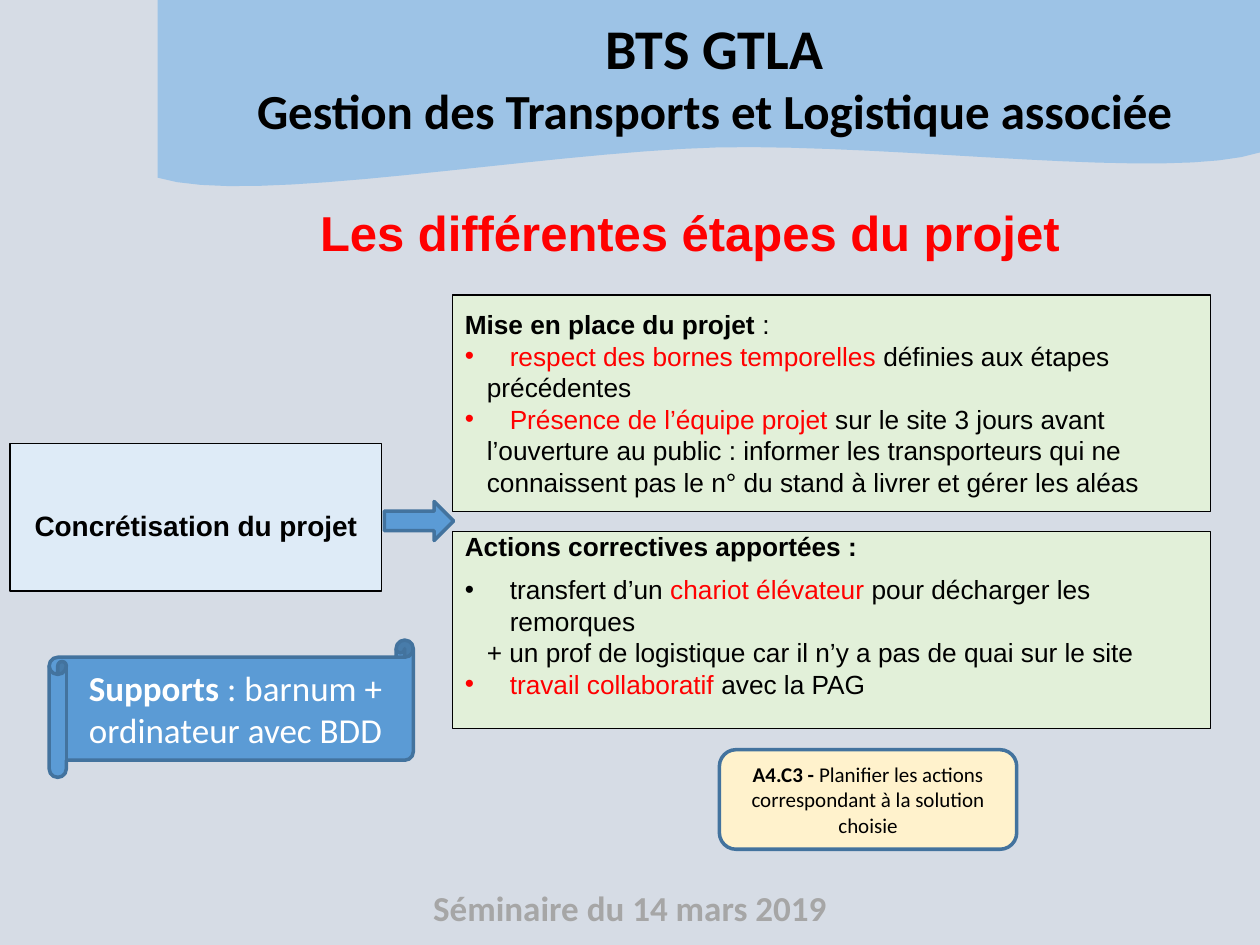
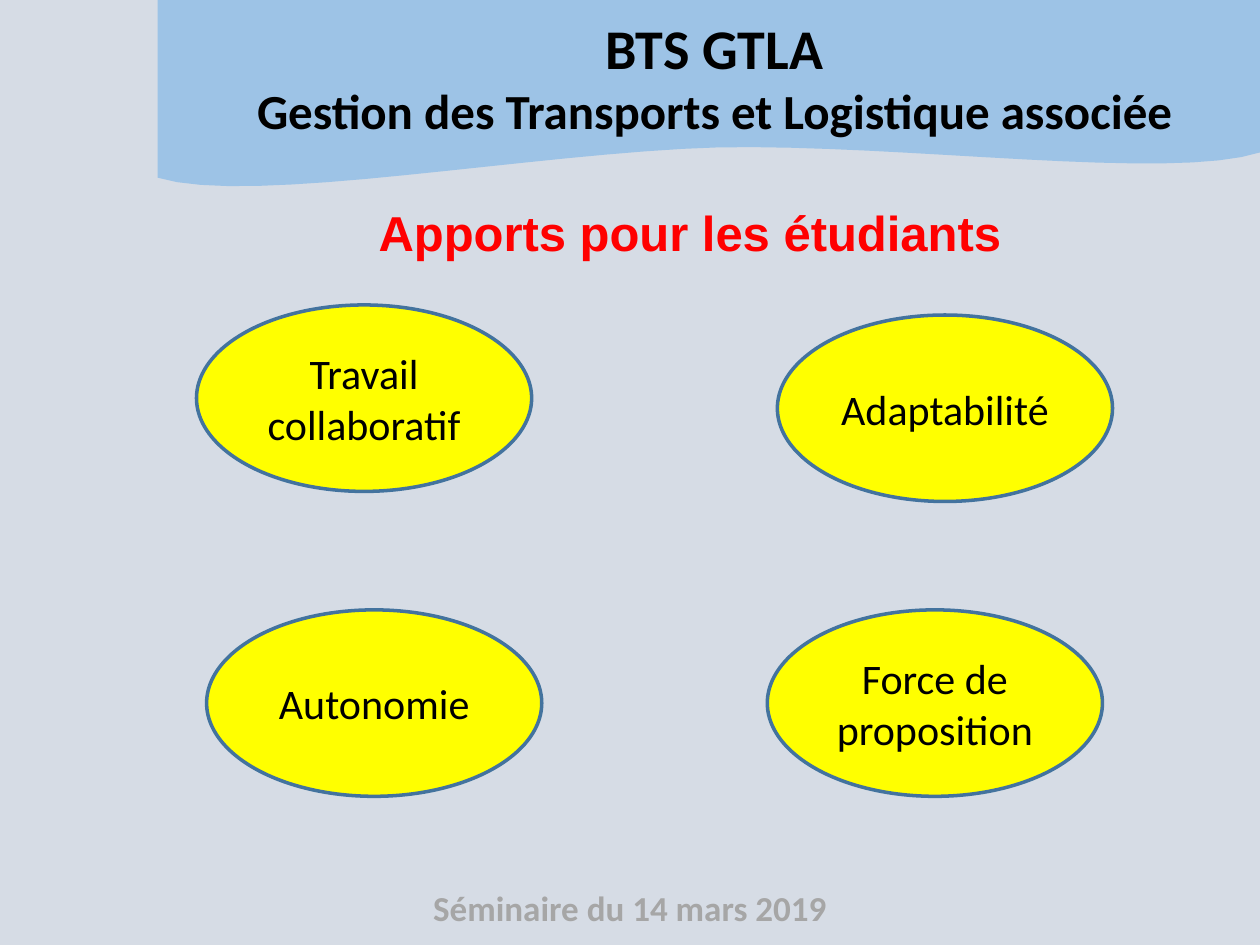
from dataclasses import dataclass

from lxml.etree import SubElement
from pptx import Presentation
from pptx.dml.color import RGBColor
from pptx.enum.shapes import MSO_SHAPE
from pptx.enum.text import MSO_ANCHOR, PP_ALIGN
from pptx.oxml.ns import qn
from pptx.util import Pt


@dataclass(frozen=True)
class Theme:
    # Colours
    background: str = "D6DCE5"
    band: str = "9DC3E6"
    footer: str = "A6A6A6"
    black: str = "000000"
    white: str = "FFFFFF"
    red: str = "FF0000"
    blue: str = "5B9BD5"
    outline: str = "43739E"
    pale_blue: str = "DEEBF7"
    green: str = "E2F0D9"
    cream: str = "FFF2CC"
    yellow: str = "FFFF00"
    # Fonts and type sizes
    body_font: str = "Arial"
    shape_font: str = "Calibri"
    banner_size: float = 32
    heading_size: float = 28
    theme_size: float = 24
    support_size: float = 20
    step_size: float = 16
    detail_size: float = 15
    skill_size: float = 12


def bezier(start, first, second, end, steps=16):
    """Points along a cubic curve, without its start."""
    for step in range(1, steps + 1):
        t = step / steps
        weights = ((1 - t) ** 3, 3 * t * (1 - t) ** 2, 3 * t * t * (1 - t), t ** 3)
        yield tuple(
            sum(weight * value for weight, value in zip(weights, values))
            for values in zip(start, first, second, end)
        )


class SlideBuilder:
    def __init__(self, deck, theme):
        self.deck = deck
        self.theme = theme
        self.page = None

    def new_page(self, heading):
        theme = self.theme
        self.page = self.deck.slides.add_slide(self.deck.slide_layouts[6])
        background = self.page.background.fill
        background.solid()
        background.fore_color.rgb = RGBColor.from_string(theme.background)

        # Footer, wavy band and banner title
        banner = {"name": theme.shape_font, "bold": True}
        self.text((180, 503.28, 360, 31.68), [
            [("Séminaire du 14 mars 2019",
              {**banner, "size": theme.support_size, "color": theme.footer})]])
        self.band()
        self.text((135.36, 4.32, 545.76, 79.92), [
            [("BTS GTLA", {**banner, "size": theme.banner_size})],
            [("Gestion des Transports et Logistique associée",
              {**banner, "size": theme.heading_size})]])

        # Page heading
        self.text((163.44, 112.32, 461.52, 41.04), [
            [(heading, {"name": theme.body_font, "bold": True,
                        "size": theme.heading_size, "color": theme.red})]])

    def band(self):
        right, middle, left = (720, 87.12), (410.4, 84.24), (90, 101.52)
        points = [(720, 0), right]
        points += bezier(right, (668.88, 103.68), (515.52, 82.08), middle)
        points += bezier(middle, (305.28, 87.12), (143.28, 118.08), left)
        outline = self.page.shapes.build_freeform(Pt(90), 0)
        outline.add_line_segments([(Pt(x), Pt(y)) for x, y in points], close=True)
        self.paint(outline.convert_to_shape(), self.theme.band)

    def paint(self, shape, fill, line=None, width=2):
        shape.shadow.inherit = False
        shape.fill.solid()
        shape.fill.fore_color.rgb = RGBColor.from_string(fill)
        if line:
            shape.line.color.rgb = RGBColor.from_string(line)
            shape.line.width = Pt(width)
        else:
            shape.line.fill.background()

    def set_text(self, shape, paragraphs, align=PP_ALIGN.CENTER, **frame_format):
        frame = shape.text_frame
        frame.word_wrap = True
        for name, value in frame_format.items():
            setattr(frame, name, value)
        for index, spans in enumerate(paragraphs):
            para = frame.paragraphs[0] if index == 0 else frame.add_paragraph()
            para.alignment = align
            for text, style in spans:
                self.span(para, text, style)
        return frame

    def span(self, para, text, style):
        style = {"color": self.theme.black, "bold": False, **style}
        run = para.add_run()
        run.text = text
        run.font.color.rgb = RGBColor.from_string(style.pop("color"))
        style["size"] = Pt(style["size"])
        for name, value in style.items():
            setattr(run.font, name, value)

    def text(self, place, paragraphs):
        box = self.page.shapes.add_textbox(*map(Pt, place))
        return self.set_text(box, paragraphs)

    def shape(self, kind, place, fill, paragraphs=(), line=None, width=2, **text_format):
        shape = self.page.shapes.add_shape(kind, *map(Pt, place))
        self.paint(shape, fill, line or self.theme.outline, width)
        return self.set_text(shape, paragraphs,
                             **{"vertical_anchor": MSO_ANCHOR.MIDDLE, **text_format})

    def detail(self, top, height, title, lines, gap=0, margin_bottom=3.6):
        """Green panel; each line is (has bullet, words before, red words, words after)."""
        theme = self.theme
        normal = {"name": theme.body_font, "size": theme.detail_size}
        bold, red = {**normal, "bold": True}, {**normal, "color": theme.red}
        paragraphs = [[(title[0], bold), (title[1], normal)]]
        for _, before, key, after in lines:
            paragraphs.append([(before, normal), (key, red), (after, normal)])
        paragraphs = [[span for span in spans if span[0]] for spans in paragraphs]
        frame = self.shape(MSO_SHAPE.RECTANGLE, (258.48, top, 433.44, height),
                           theme.green, paragraphs, line=theme.black, width=0.75,
                           align=PP_ALIGN.LEFT, margin_right=0,
                           margin_bottom=Pt(margin_bottom))
        for para, (bulleted, *_) in zip(frame.paragraphs[1:], lines):
            self.indent(para, bulleted)
        frame.paragraphs[1].space_before = Pt(gap)

    def indent(self, para, bulleted):
        properties = para._p.get_or_add_pPr()
        margin = Pt(25.7 if bulleted else 12.6)
        properties.set("marL", str(margin))
        properties.set("indent", str(-margin if bulleted else 0))
        if bulleted:
            SubElement(properties, qn("a:buFont")).set("typeface", "Arial")
            SubElement(properties, qn("a:buChar")).set("char", "•")


def project_steps(builder):
    theme = builder.theme
    builder.new_page("Les différentes étapes du projet")

    # Project stage and arrow
    frame = builder.shape(
        MSO_SHAPE.RECTANGLE, (5.76, 253.44, 212.4, 84.24), theme.pale_blue,
        [[("Concrétisation du projet",
           {"name": theme.body_font, "size": theme.step_size, "bold": True})]],
        line=theme.black, width=0.75, word_wrap=False)
    frame.paragraphs[0].line_spacing = 1.5
    builder.shape(MSO_SHAPE.RIGHT_ARROW, (219.6, 286.56, 39.6, 22.32), theme.blue)

    # Details
    builder.detail(168.48, 123.84, ("Mise en place du projet ", ":"), [
        (True, "", "respect des bornes temporelles ", "définies aux étapes"),
        (False, "précédentes", "", ""),
        (True, "", "Présence de l’équipe projet ", "sur le site 3 jours avant"),
        (False, "l’ouverture au public : informer les transporteurs qui ne", "", ""),
        (False, "connaissent pas le n° du stand à livrer et gérer les aléas", "", ""),
    ])
    builder.detail(303.84, 112.32, ("Actions correctives apportées :", ""), [
        (True, "transfert d’un ", "chariot élévateur ", "pour décharger les remorques"),
        (False, "+ un prof de logistique car il n’y a pas de quai sur le site", "", ""),
        (True, "", "travail collaboratif ", "avec la PAG"),
    ], gap=7, margin_bottom=20.85)

    # Supports and skill
    support = {"name": theme.shape_font, "size": theme.support_size, "color": theme.white}
    builder.shape(MSO_SHAPE.HORIZONTAL_SCROLL, (28.08, 365.76, 208.08, 78.48), theme.blue,
                  [[("Supports ", {**support, "bold": True}),
                    (": barnum + ordinateur avec BDD", support)]])
    skill = {"name": theme.shape_font, "size": theme.skill_size}
    builder.shape(MSO_SHAPE.ROUNDED_RECTANGLE, (411.12, 428.4, 169.92, 56.88), theme.cream,
                  [[("A4.C3 - ", {**skill, "bold": True}),
                    ("Planifier les actions correspondant à la solution choisie", skill)]])


def student_benefits(builder):
    theme = builder.theme
    builder.new_page("Apports pour les étudiants")
    benefits = {
        "Travail collaboratif": (112.32, 174.24),
        "Autonomie": (118.08, 348.48),
        "Adaptabilité": (444.24, 180),
        "Force de proposition": (438.48, 348.48),
    }
    for benefit, corner in benefits.items():
        builder.shape(MSO_SHAPE.OVAL, (*corner, 191.52, 106.56), theme.yellow,
                      [[(benefit, {"name": theme.shape_font, "size": theme.theme_size})]])


def main():
    deck = Presentation()
    deck.slide_width, deck.slide_height = Pt(720), Pt(540)
    builder = SlideBuilder(deck, Theme())
    project_steps(builder)
    student_benefits(builder)
    deck.save("out.pptx")


if __name__ == "__main__":
    main()
